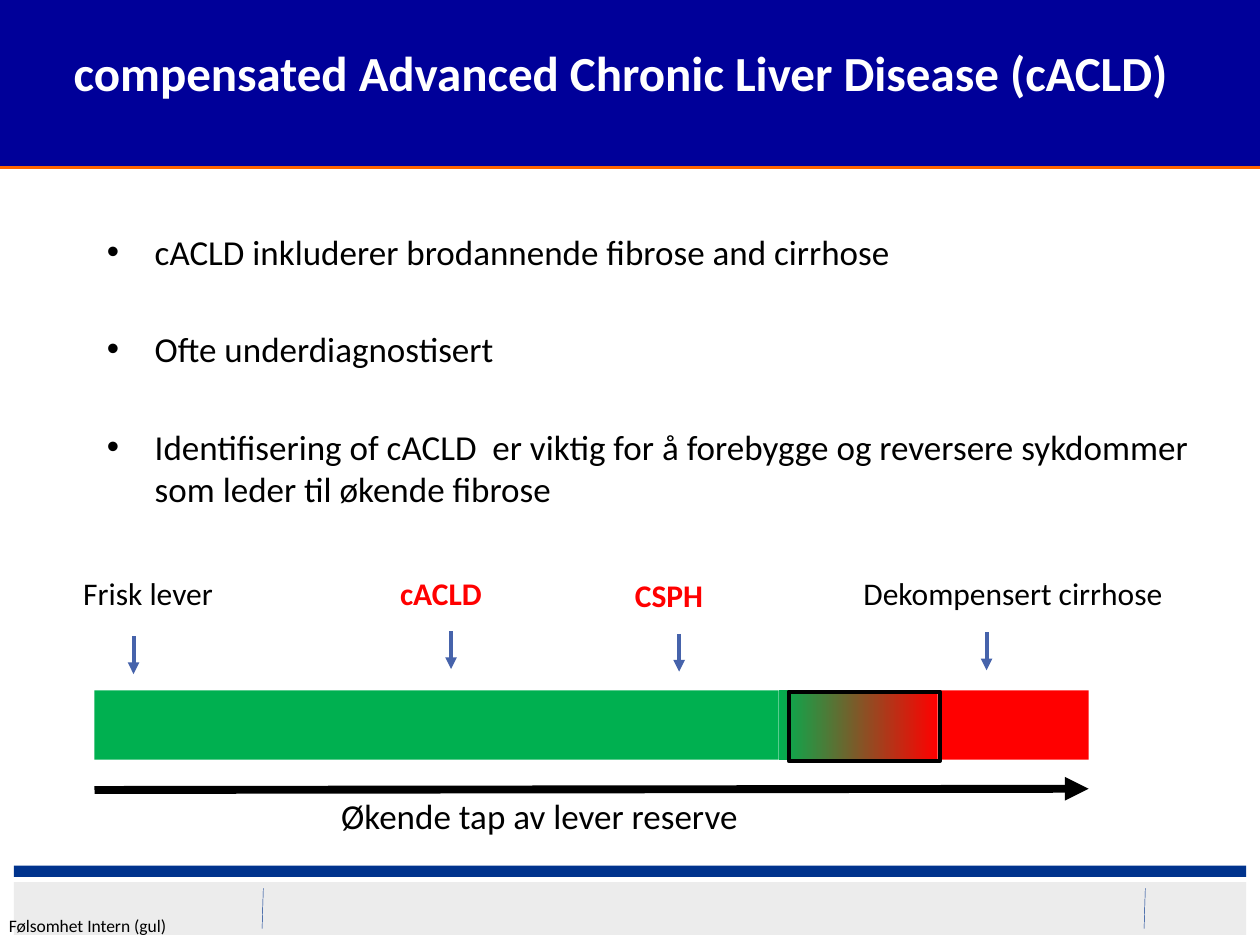
from dataclasses import dataclass

import pptx
import pptx.dml.color
import pptx.enum.shapes
import pptx.enum.text
import pptx.oxml
import pptx.oxml.ns
import pptx.util
from pptx.util import Inches

COLORS = {
    "black": "000000", "white": "FFFFFF", "navy": "000099", "orange": "FF6600",
    "footer": "ECECEC", "rule": "00338D", "arrow": "4663AB",
    "healthy": "00B050", "severe": "FF0000",
}
FONT = "Calibri"
ALIGN = pptx.enum.text.PP_ALIGN
BAR_TOP, BAR_HEIGHT = 5.48, 0.55


@dataclass
class Stage:
    label: str
    left: float
    top: float
    width: float
    arrow_x: float
    arrow_top: float
    highlighted: bool = False


STAGES = [
    Stage("Frisk lever", 0.35, 4.51, 1.65, 1.06, 5.05),
    Stage("cACLD", 2.95, 4.51, 1.1, 3.58, 5.01, True),
    Stage("CSPH", 4.76, 4.52, 1.1, 5.39, 5.03, True),
    Stage("Dekompensert cirrhose", 6.74, 4.51, 2.6, 7.83, 5.02),
]
STATEMENTS = [
    "cACLD inkluderer brodannende fibrose and cirrhose",
    "Ofte underdiagnostisert",
    "Identifisering of cACLD  er viktig for å forebygge og reversere "
    "sykdommer som leder til økende fibrose",
]


def rgb(name: str) -> pptx.dml.color.RGBColor:
    return pptx.dml.color.RGBColor.from_string(COLORS[name])


def style_font(paragraph, size: float, color: str = "black", bold: bool = False) -> None:
    for run in paragraph.runs:
        run.font.name = FONT
        run.font.size = pptx.util.Pt(size)
        run.font.bold = bold
        run.font.color.rgb = rgb(color)


def add_box(slide, left: float, top: float, width: float, height: float):
    """Add a rectangle with neither fill nor outline."""
    box = slide.shapes.add_shape(
        pptx.enum.shapes.MSO_SHAPE.RECTANGLE,
        Inches(left), Inches(top), Inches(width), Inches(height))
    box.shadow.inherit = False
    box.fill.background()
    box.line.fill.background()
    return box


def add_bar(slide, left: float, top: float, width: float, height: float, color: str) -> None:
    bar = add_box(slide, left, top, width, height)
    bar.fill.solid()
    bar.fill.fore_color.rgb = rgb(color)


def add_line(slide, x1: float, y1: float, x2: float, y2: float,
             color: str, width: float, arrow: bool = False) -> None:
    line = slide.shapes.add_connector(
        pptx.enum.shapes.MSO_CONNECTOR.STRAIGHT,
        Inches(x1), Inches(y1), Inches(x2), Inches(y2))
    line.line.color.rgb = rgb(color)
    line.line.width = pptx.util.Pt(width)
    if arrow:
        head = pptx.oxml.parse_xml(
            f'<a:tailEnd {pptx.oxml.ns.nsdecls("a")} type="triangle"/>')
        line.line._get_or_add_ln().append(head)
    line._element.spPr.append(pptx.oxml.parse_xml(
        f'<a:effectLst {pptx.oxml.ns.nsdecls("a")}/>'))


def add_text(slide, text: str, left: float, top: float, width: float, height: float,
             size: float, color: str = "black", bold: bool = False,
             align=ALIGN.LEFT, wrap: bool = True):
    box = slide.shapes.add_textbox(
        Inches(left), Inches(top), Inches(width), Inches(height))
    frame = box.text_frame
    frame.word_wrap = wrap
    frame.text = text
    for paragraph in frame.paragraphs:
        paragraph.alignment = align
        style_font(paragraph, size, color, bold)
    return frame


def add_footer(slide) -> None:
    add_bar(slide, 0.11, 7, 9.78, 0.42, "footer")
    add_bar(slide, 0.11, 6.87, 9.78, 0.09, "rule")
    for x in (2.09, 9.09):
        add_line(slide, x, 7.05, x - 0.01, 7.37, "rule", 0.25)
    frame = add_text(slide, "Følsomhet Intern (gul)", 0.07, 7.26, 1.29, 0.17, 10)
    frame.margin_left = frame.margin_right = 0
    frame.margin_top = frame.margin_bottom = 0


def format_title(title) -> None:
    title.left, title.top = Inches(-0.35), Inches(-0.19)
    title.width, title.height = Inches(10.55), Inches(1.52)
    title.fill.solid()
    title.fill.fore_color.rgb = rgb("navy")
    title.line.color.rgb = rgb("orange")
    title.line.width = pptx.util.Pt(2.25)
    frame = title.text_frame
    frame.text = "compensated Advanced Chronic Liver Disease (cACLD)"
    frame.word_wrap = True
    frame.auto_size = pptx.enum.text.MSO_AUTO_SIZE.NONE
    frame.vertical_anchor = pptx.enum.text.MSO_ANCHOR.MIDDLE
    frame.paragraphs[0].alignment = ALIGN.CENTER
    style_font(frame.paragraphs[0], 28, "white", True)


def add_statements(slide) -> None:
    frame = add_text(slide, "\n".join(STATEMENTS), 0.75, 1.78, 8.9, 2.6, 20)
    for index, paragraph in enumerate(frame.paragraphs):
        properties = paragraph._p.get_or_add_pPr()
        properties.set("marL", str(Inches(0.38)))
        properties.set("indent", str(Inches(-0.38)))
        for bullet in ('buFont {} typeface="Arial"', 'buChar {} char="•"'):
            properties.append(pptx.oxml.parse_xml(
                f'<a:{bullet.format(pptx.oxml.ns.nsdecls("a"))}/>'))
        if index:
            paragraph.space_before = pptx.util.Pt(31.6)


def add_progression(slide) -> None:
    add_bar(slide, 0.75, BAR_TOP, 5.43, BAR_HEIGHT, "healthy")
    add_bar(slide, 7.44, BAR_TOP, 1.2, BAR_HEIGHT, "severe")
    transition = add_box(slide, 6.18, BAR_TOP, 1.26, BAR_HEIGHT)
    transition.fill.gradient()
    transition.fill.gradient_angle = 0
    for stop, color, position in zip(
            transition.fill.gradient_stops, ("healthy", "severe"), (0, 1)):
        stop.color.rgb = rgb(color)
        stop.position = position

    add_line(slide, 0.75, 6.27, 8.64, 6.26, "black", 4.5, arrow=True)
    add_text(slide, "Økende tap av lever reserve", 2.61, 6.26, 3.38, 0.44, 20, wrap=False)

    frame = add_box(slide, 6.26, BAR_TOP + 0.01, 1.2, BAR_HEIGHT)
    frame.line.color.rgb = rgb("black")
    frame.line.width = pptx.util.Pt(2.25)

    for stage in STAGES:
        add_text(slide, stage.label, stage.left, stage.top, stage.width, 0.4, 18,
                 "severe" if stage.highlighted else "black",
                 stage.highlighted, ALIGN.CENTER)
        add_line(slide, stage.arrow_x, stage.arrow_top,
                 stage.arrow_x, stage.arrow_top + 0.3, "arrow", 2.25, arrow=True)


def main() -> None:
    presentation = pptx.Presentation()
    presentation.slide_width, presentation.slide_height = Inches(10), Inches(7.5)
    slide = presentation.slides.add_slide(presentation.slide_layouts[5])
    add_footer(slide)
    format_title(slide.shapes.title)
    add_statements(slide)
    add_progression(slide)
    presentation.save("out.pptx")


if __name__ == "__main__":
    main()
